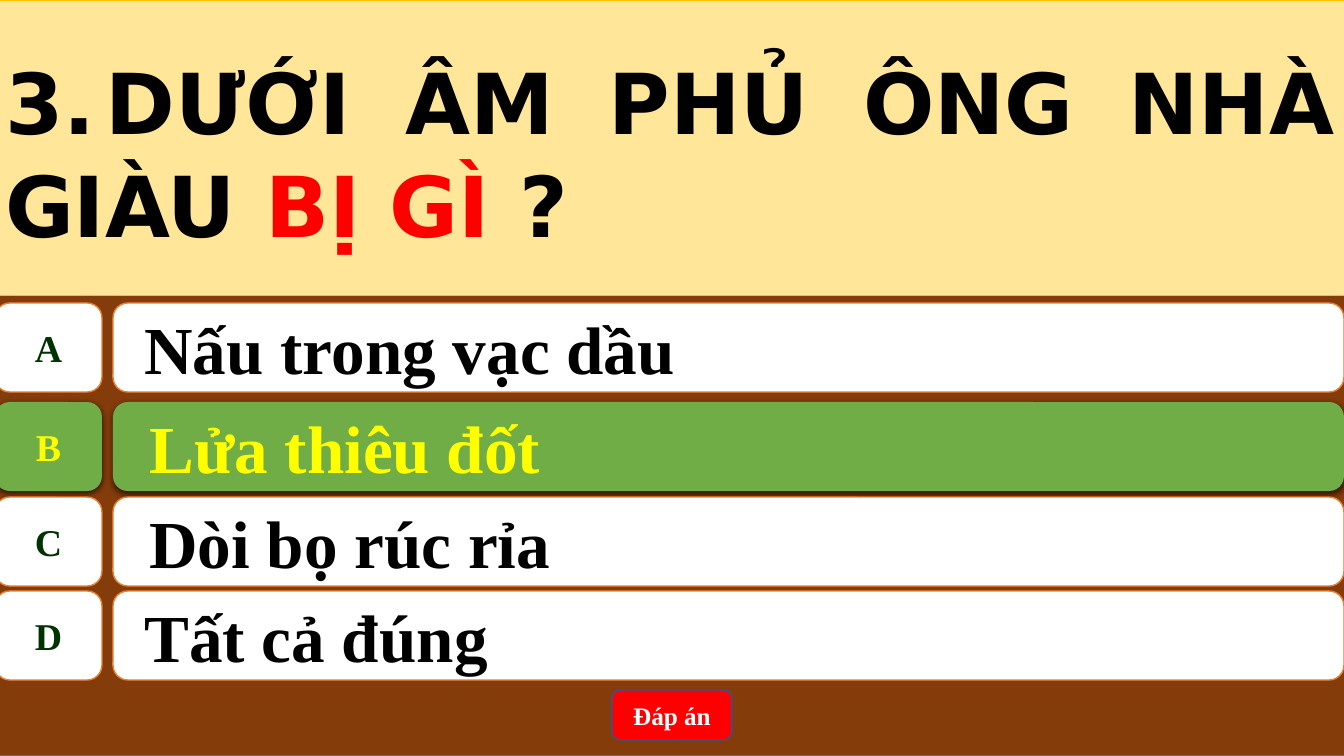
from lxml import etree
from pptx import Presentation
from pptx import util as u
from pptx.dml.color import RGBColor
from pptx.enum import shapes, text
from pptx.oxml import ns

PX = 914400 / 100.8  # EMU in one px
SLIDE_W, SLIDE_H = 1344, 756

BROWN = RGBColor(0x84, 0x3C, 0x0B)
STEEL = RGBColor(0x43, 0x73, 0x9E)
CREAM = RGBColor(0xFF, 0xE6, 0x99)
GOLD = RGBColor(0xFF, 0xC0, 0x00)
ORANGE = RGBColor(0xED, 0x7D, 0x31)
DARK_GREEN = RGBColor(0x00, 0x33, 0x00)
GREEN = RGBColor(0x70, 0xAD, 0x47)
YELLOW = RGBColor(0xFF, 0xFF, 0x00)
RED = RGBColor(0xFF, 0x00, 0x00)
NAVY = RGBColor(0x32, 0x54, 0x91)
WHITE = RGBColor(0xFF, 0xFF, 0xFF)
BLACK = RGBColor(0x00, 0x00, 0x00)

SERIF, SANS = "Times New Roman", "DejaVu Sans"
RECT = shapes.MSO_SHAPE.RECTANGLE
ROUND = shapes.MSO_SHAPE.ROUNDED_RECTANGLE
LABEL = shapes.MSO_SHAPE.FLOWCHART_ALTERNATE_PROCESS


def px(length):
    return u.Emu(round(length * PX))


def paint(shape, fill, line=None, width=1):
    shape.fill.solid()
    shape.fill.fore_color.rgb = fill
    if line is None:
        shape.line.fill.background()
    else:
        shape.line.color.rgb = line
        shape.line.width = u.Pt(width)


def add_box(slide, kind, box, fill, line=None):
    shape = slide.shapes.add_shape(kind, *map(px, box))
    shape.shadow.inherit = False
    paint(shape, fill, line)
    return shape


def add_shadow(shape):
    effects = shape.element.spPr.find(ns.qn("a:effectLst"))
    outer = etree.SubElement(effects, ns.qn("a:outerShdw"), blurRad="57150",
                             dist="19050", dir="5400000", algn="ctr", rotWithShape="0")
    black = etree.SubElement(outer, ns.qn("a:srgbClr"), val="000000")
    etree.SubElement(black, ns.qn("a:alpha"), val="63000")


def write(shape, words, size, color, font=SERIF, align=text.PP_ALIGN.CENTER,
          wrap=True, left=10):
    """Append one bold run to the shape's paragraph."""
    frame = shape.text_frame
    frame.word_wrap = wrap
    frame.vertical_anchor = text.MSO_ANCHOR.MIDDLE
    frame.margin_left = px(left)
    paragraph = frame.paragraphs[0]
    paragraph.alignment = align
    run = paragraph.add_run()
    run.text = words
    run.font.name, run.font.size, run.font.bold = font, u.Pt(size), True
    run.font.color.rgb = color


def add_question(slide, box, parts):
    question = slide.shapes.title
    question.left, question.top, question.width, question.height = map(px, box)
    paint(question, CREAM, GOLD, 0.5)
    for words, color in parts:
        write(question, words, 60, color, font=SANS, align=text.PP_ALIGN.JUSTIFY)
    question.text_frame.auto_size = text.MSO_AUTO_SIZE.NONE
    question.text_frame.margin_top = px(12)
    question.text_frame.paragraphs[0].line_spacing = 1.03


def add_answer(slide, box, letter, answer, left, correct):
    x, y, width, height = box
    fill, line = (GREEN, None) if correct else (WHITE, ORANGE)
    label = add_box(slide, LABEL, (x, y, 107, height), fill, line)
    write(label, letter, 27, YELLOW if correct else DARK_GREEN, wrap=False)
    bar = add_box(slide, ROUND, (x + 118, y, width - 118, height), fill, line)
    write(bar, answer, 48, YELLOW if correct else BLACK,
          align=text.PP_ALIGN.LEFT, left=left)
    if correct:
        add_shadow(label)
        add_shadow(bar)


def add_button(slide, box, caption):
    button = add_box(slide, ROUND, box, RED, NAVY)
    write(button, caption, 18, WHITE)


def main():
    deck = Presentation()
    deck.slide_width, deck.slide_height = px(SLIDE_W), px(SLIDE_H)
    slide = deck.slides.add_slide(deck.slide_layouts[5])

    # Backdrop, placed behind the question
    backdrop = add_box(slide, RECT, (-5, 0, 1350, SLIDE_H), BROWN, STEEL)
    slide.shapes.title.element.addprevious(backdrop.element)

    # Question
    add_question(slide, (-5, 0, 1350, 295), [
        ("3.\tDƯỚI ÂM PHỦ ÔNG NHÀ GIÀU ", BLACK), ("BỊ GÌ ", RED), ("?", BLACK)])

    # Answers: letter, wording, top, left margin
    answers = [("A", "Nấu trong vạc dầu", 303, 27),
               ("B", "Lửa thiêu đốt", 402, 32),
               ("C", "Dòi bọ rúc rỉa", 497, 32),
               ("D", "Tất cả đúng", 591, 27)]
    for letter, answer, top, left in answers:
        add_answer(slide, (-5, top, 1349, 89), letter, answer, left, letter == "B")

    # Answer button
    add_button(slide, (612, 690, 120, 50), "Đáp án")

    deck.save("out.pptx")


if __name__ == "__main__":
    main()
